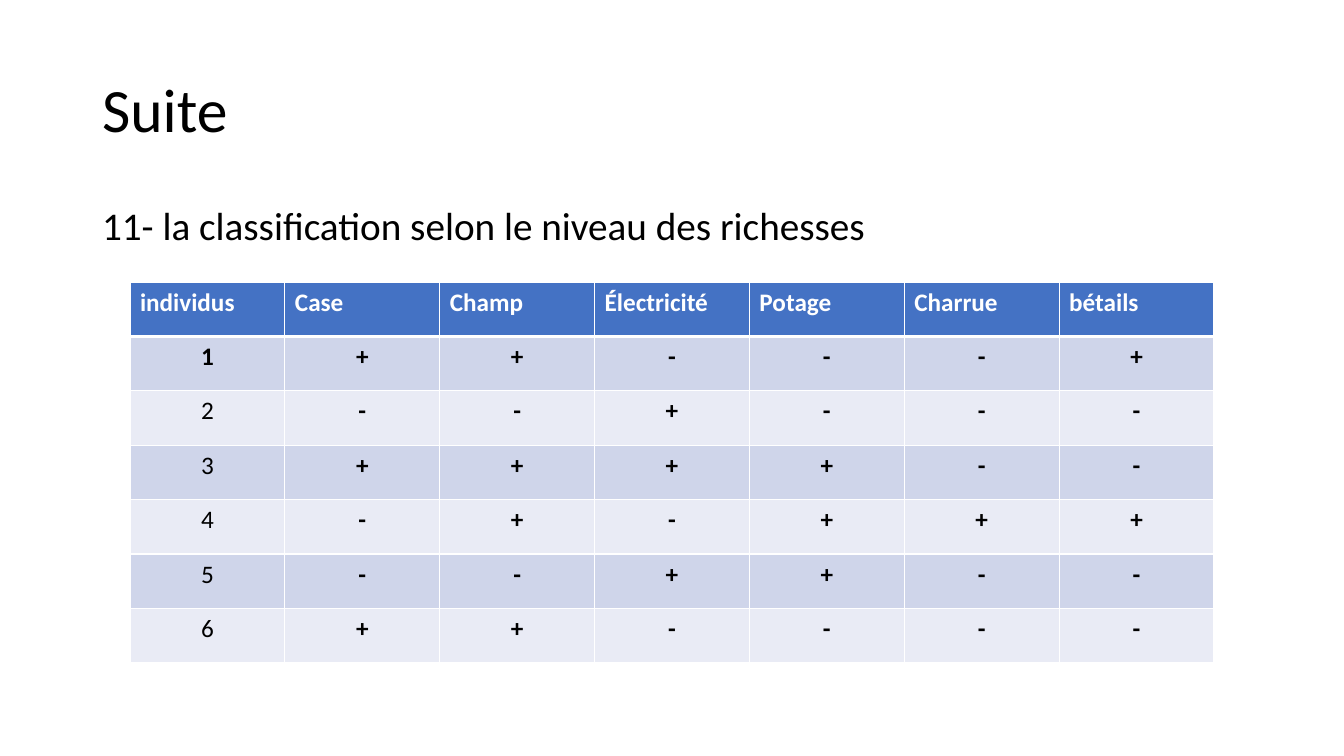
from lxml import etree
from pptx import Presentation
from pptx.dml.color import RGBColor
from pptx.enum.text import MSO_ANCHOR, MSO_AUTO_SIZE, PP_ALIGN
from pptx.oxml.ns import qn
from pptx.util import Pt

LEFT, CENTER = PP_ALIGN.LEFT, PP_ALIGN.CENTER
TOP, MIDDLE = MSO_ANCHOR.TOP, MSO_ANCHOR.MIDDLE
FIXED = MSO_AUTO_SIZE.NONE
FONT = "Calibri"
SCALE = 914400 / 100.8
COLORS = {
    "ink": "000000",
    "white": "FFFFFF",
    "head": "4472C4",
    "odd": "CFD5EA",
    "even": "E9EBF5",
}
HEADS = ["individus", "Case", "Champ", "Électricité", "Potage", "Charrue", "bétails"]
MARKS = ["++---+", "--+---", "++++--", "-+-+++", "--++--", "++----"]


def px(n):
    return round(n * SCALE)


def rgb(name):
    return RGBColor.from_string(COLORS[name])


def write(frame, text, size=18, color="ink", bold=False, align=LEFT, space=None, before=0):
    para = frame.paragraphs[0]
    para.alignment = align
    para.space_before = Pt(before)
    if space:
        para.line_spacing = space
    run = para.add_run()
    run.text = text
    font = run.font
    font.name, font.size, font.bold = FONT, Pt(size), bold
    font.color.rgb = rgb(color)
    return para


def place(shape, box, anchor):
    shape.left, shape.top, shape.width, shape.height = map(px, box)
    frame = shape.text_frame
    frame.auto_size = FIXED
    frame.word_wrap = True
    frame.vertical_anchor = anchor
    return frame


def add_title(slide, box):
    frame = place(slide.shapes.title, box, MIDDLE)
    write(frame, "Suite", size=44, space=0.9)


def add_body(slide, box):
    frame = place(slide.placeholders[1], box, TOP)
    para = write(frame, "11- la classification selon le niveau des richesses",
                 size=28, space=0.9, before=10)
    props = para._p.get_or_add_pPr()
    props.set("marL", "0")
    props.set("indent", "0")
    etree.SubElement(props, qn("a:buNone"))


def edge(cell, side, width):
    props = cell._tc.get_or_add_tcPr()
    line = etree.SubElement(props, qn(f"a:ln{side}"), w=str(Pt(width)))
    fill = etree.SubElement(line, qn("a:solidFill"))
    etree.SubElement(fill, qn("a:srgbClr"), val=COLORS["white"])


def add_grid(slide, box):
    rows = [HEADS] + [[str(i), *marks] for i, marks in enumerate(MARKS, 1)]
    table = slide.shapes.add_table(len(rows), len(HEADS), *map(px, box)).table
    for r, row in enumerate(rows):
        head = r == 0
        shade = "head" if head else "odd" if r % 2 else "even"
        for c, text in enumerate(row):
            cell = table.cell(r, c)
            for side in "LRTB":
                thick = (r, side) in ((0, "B"), (1, "T"))
                edge(cell, side, 3 if thick else 1)
            cell.fill.solid()
            cell.fill.fore_color.rgb = rgb(shade)
            write(cell.text_frame, text, bold=r < 2 or c > 0,
                  color="white" if head else "ink",
                  align=LEFT if head else CENTER)


def main():
    deck = Presentation()
    deck.slide_width, deck.slide_height = px(1344), px(756)
    slide = deck.slides.add_slide(deck.slide_layouts[1])
    add_title(slide, (92, 40, 1159, 146))
    add_body(slide, (92, 202, 1159, 480))
    add_grid(slide, (130, 282, 1084, 381))
    deck.save("out.pptx")


if __name__ == "__main__":
    main()
